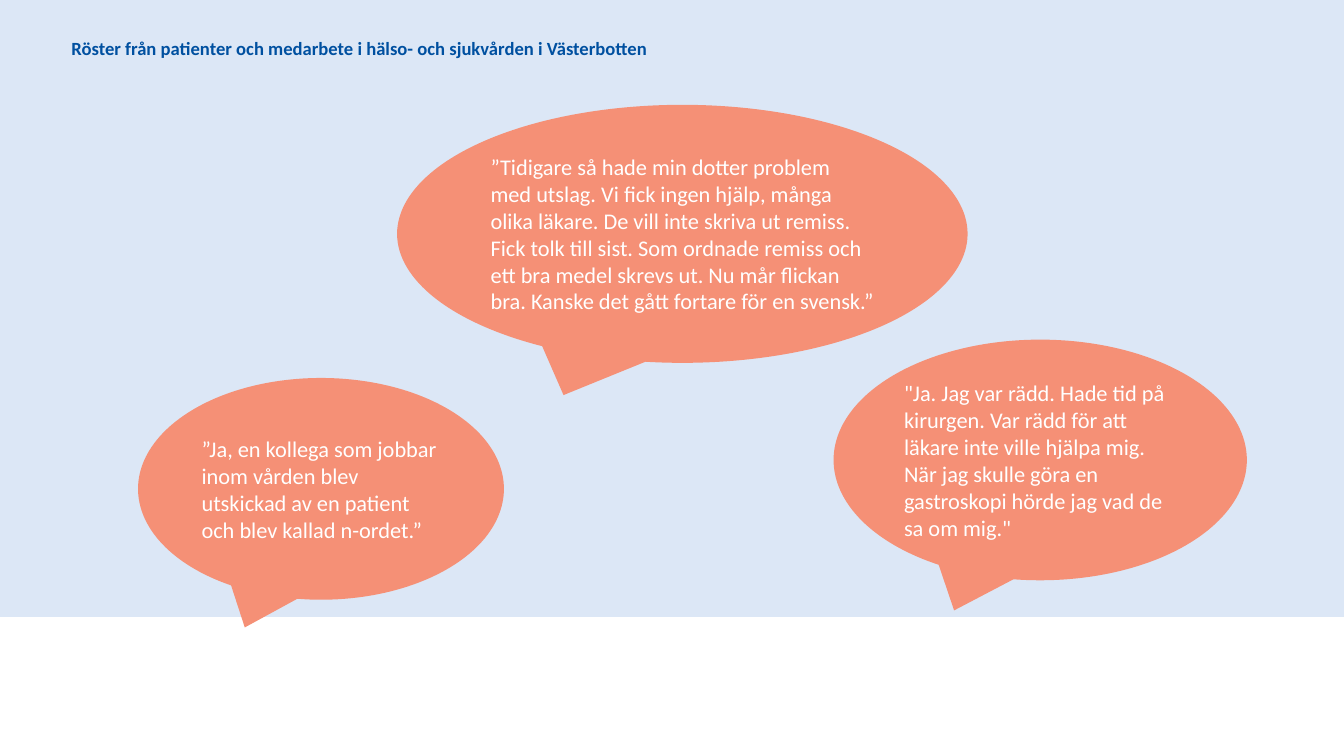
from pptx import Presentation
from pptx.dml.color import RGBColor
from pptx.enum.shapes import MSO_SHAPE as Shape
from pptx.enum.text import MSO_ANCHOR as Anchor, PP_ALIGN as Align
from pptx.util import Pt

COLORS = {
    "background": "DCE7F6",
    "heading": "0050A0",
    "bubble": "F59076",
    "quote": "FFFFFF",
}
WIDTH, HEIGHT = 960, 540
BAND_HEIGHT = 440.64

HEADING = "Röster från patienter och medarbete i hälso- och sjukvården i Västerbotten"
QUOTES = [
    ((98.64, 270, 261.36, 158.4),
     "”Ja, en kollega som jobbar inom vården blev utskickad av en patient "
     "och blev kallad n-ordet.”"),
    ((595.44, 242.64, 295.2, 171.9),
     "\"Ja. Jag var rädd. Hade tid på kirurgen. Var rädd för att läkare inte "
     "ville hjälpa mig. När jag skulle göra en gastroskopi hörde jag vad de "
     "sa om mig.\""),
    ((283.68, 74.88, 407.52, 184.32),
     "”Tidigare så hade min dotter problem med utslag. Vi fick ingen hjälp, "
     "många olika läkare. De vill inte skriva ut remiss. Fick tolk till sist. "
     "Som ordnade remiss och ett bra medel skrevs ut. Nu mår flickan bra. "
     "Kanske det gått fortare för en svensk.”"),
]


def add_filled_shape(slide, kind, box, color):
    shape = slide.shapes.add_shape(kind, *map(Pt, box))
    shape.shadow.inherit = False
    shape.fill.solid()
    shape.fill.fore_color.rgb = RGBColor.from_string(COLORS[color])
    shape.line.fill.background()
    return shape


def write_text(frame, text, size, color, bold=False):
    frame.word_wrap = True
    frame.vertical_anchor = Anchor.MIDDLE
    paragraph = frame.paragraphs[0]
    paragraph.text = text
    paragraph.alignment = Align.LEFT
    font = paragraph.font
    font.name = "Calibri"
    font.size = Pt(size)
    font.bold = bold
    font.color.rgb = RGBColor.from_string(COLORS[color])


def add_heading(slide, box):
    frame = slide.shapes.add_textbox(*map(Pt, box)).text_frame
    frame.margin_top = frame.margin_bottom = 0
    write_text(frame, HEADING, 13.3, "heading", bold=True)


def add_quote(slide, box, text):
    bubble = add_filled_shape(slide, Shape.OVAL_CALLOUT, box, "bubble")
    write_text(bubble.text_frame, text, 16, "quote")


def main():
    presentation = Presentation()
    presentation.slide_width = Pt(WIDTH)
    presentation.slide_height = Pt(HEIGHT)
    slide = presentation.slides.add_slide(presentation.slide_layouts[6])
    add_filled_shape(slide, Shape.RECTANGLE, (0, 0, WIDTH, BAND_HEIGHT), "background")
    add_heading(slide, (43.92, 25.92, 846.72, 16.56))
    for box, text in QUOTES:
        add_quote(slide, box, text)
    presentation.save("out.pptx")


if __name__ == "__main__":
    main()
